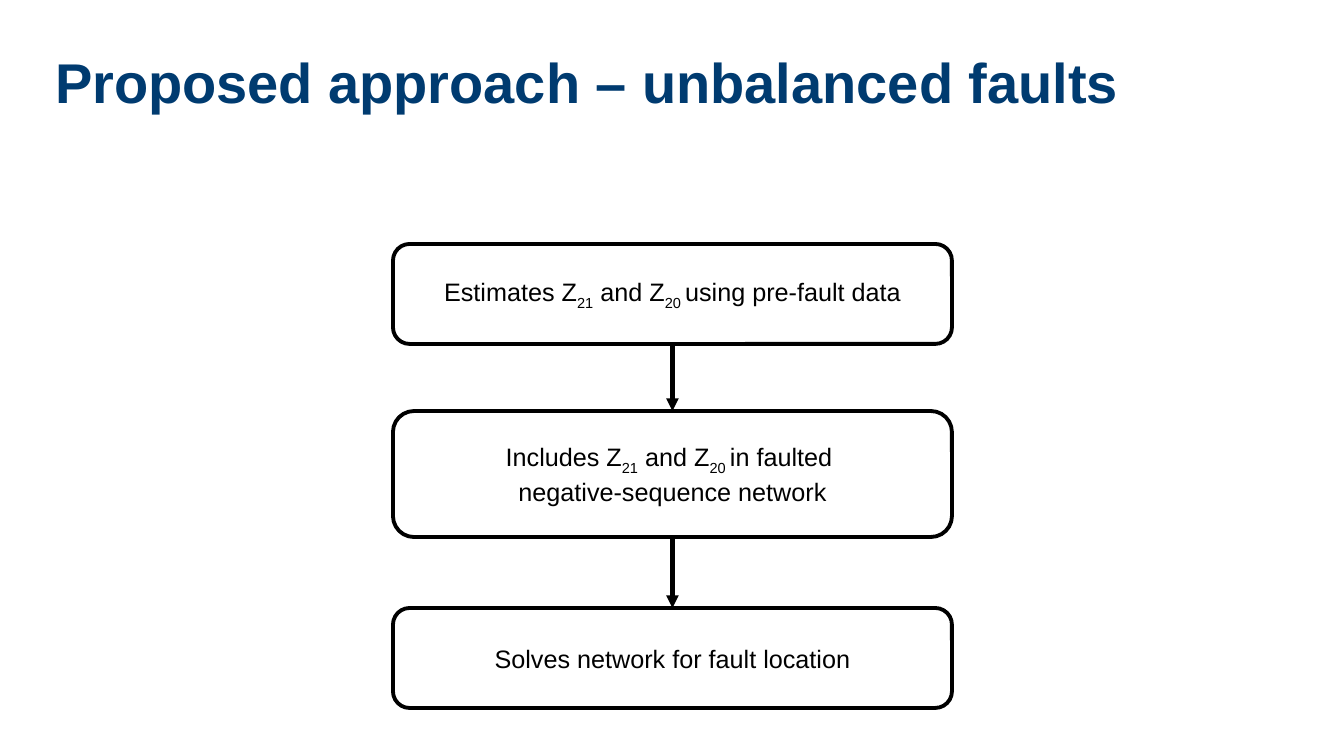
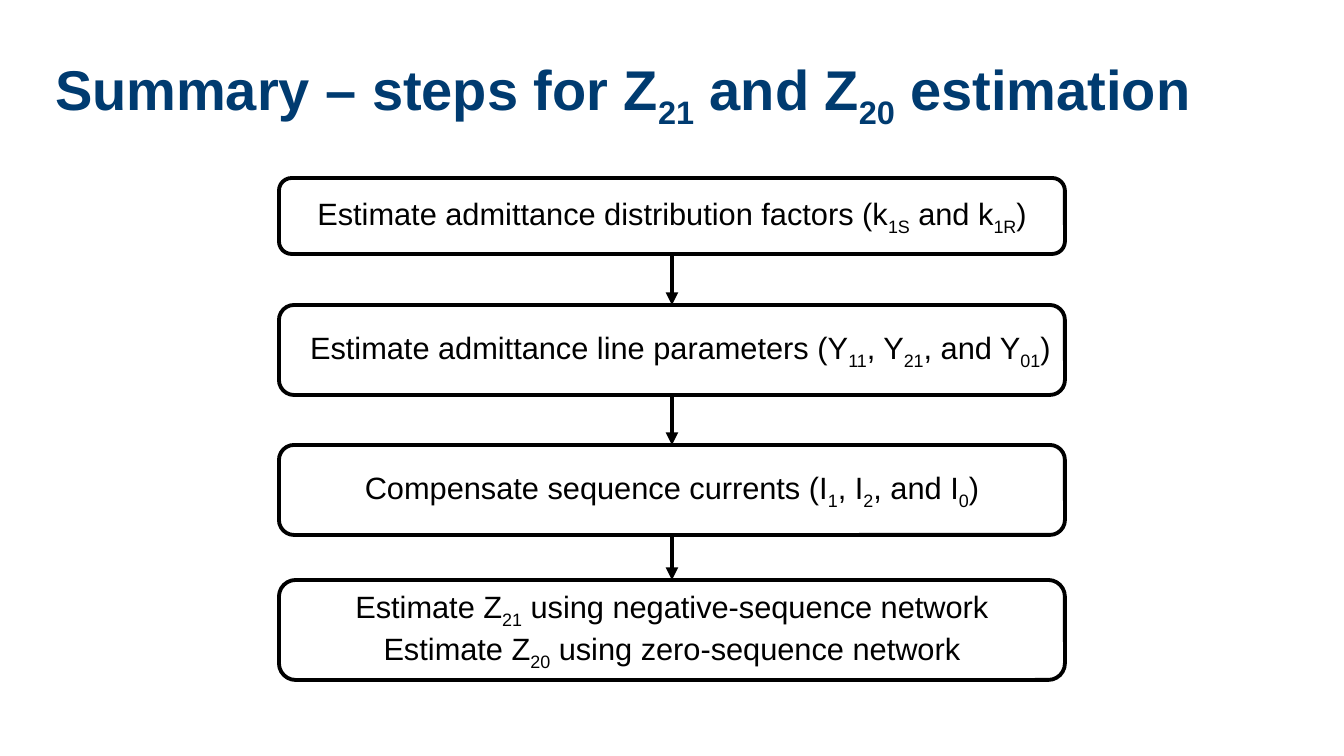
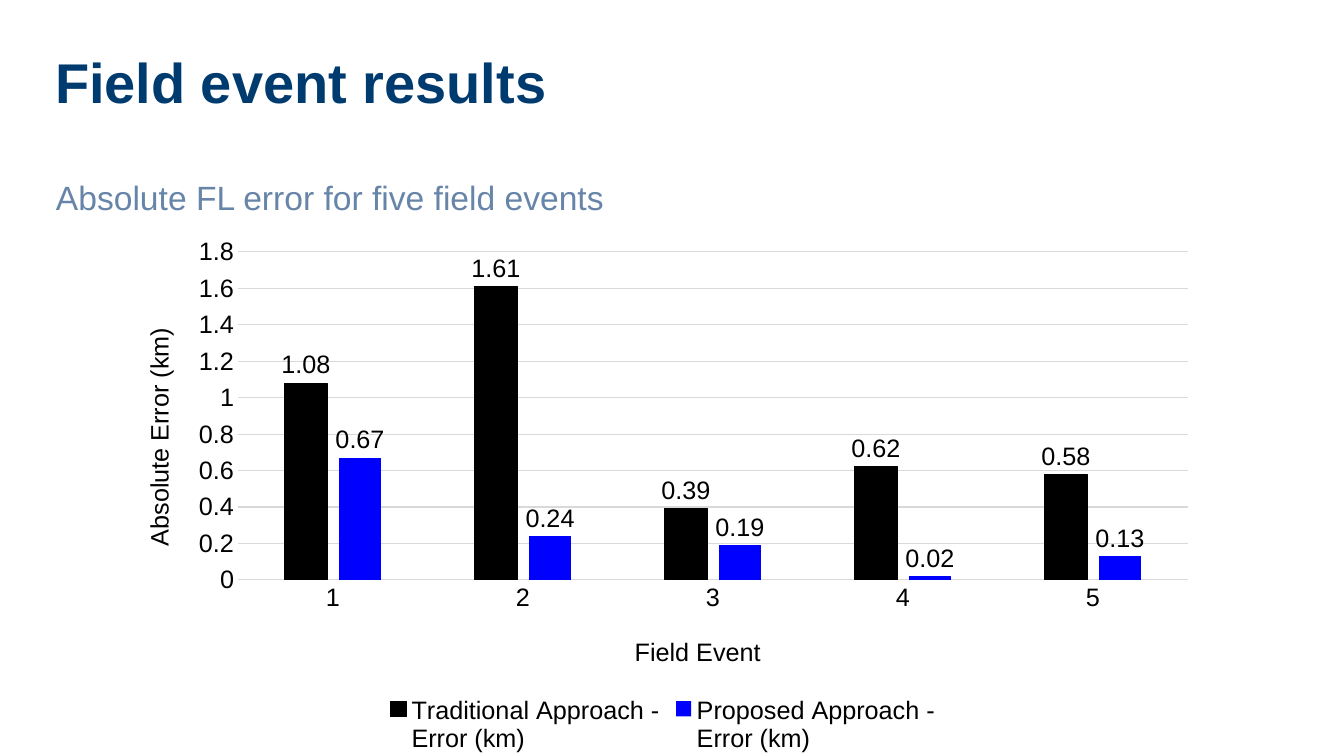
import dataclasses
import itertools

import pptx
import pptx.chart.data
import pptx.dml.color
import pptx.enum.chart
import pptx.enum.shapes
import pptx.enum.text
import pptx.oxml
import pptx.oxml.ns
import pptx.util
from lxml import etree

PX = 12192000 / 1344  # EMU in one px
WIDTH, HEIGHT = 1344, 756

ALIGN = pptx.enum.text.PP_ALIGN
ANCHOR = pptx.enum.text.MSO_ANCHOR
qn = pptx.oxml.ns.qn


@dataclasses.dataclass(frozen=True)
class Theme:
    font: str = "Arial"
    title: str = "003B70"
    subtitle: str = "6785A8"
    ink: str = "000000"
    paper: str = "FFFFFF"
    grid: str = "D9D9D9"
    accent: str = "0000FF"
    title_size: int = 40
    subtitle_size: int = 24
    step_size: int = 22
    body_size: int = 18
    outline: float = 2.75
    arrow: float = 3
    hairline: float = 0.75


def emu(*lengths):
    return [pptx.util.Emu(round(length * PX)) for length in lengths]


def rgb(value):
    return pptx.dml.color.RGBColor.from_string(value)


def write(frame, text, *, font, size, color, bold=False, align=ALIGN.LEFT,
          spacing=None, before=None, after=None):
    """Fill a text frame; parts between bars are subscripts, newlines are breaks."""
    para = frame.paragraphs[0]
    para.alignment = align
    if spacing is not None:
        para.line_spacing = spacing
    if before is not None:
        para.space_before = pptx.util.Pt(before)
    if after is not None:
        para.space_after = pptx.util.Pt(after)
    for index, part in enumerate(text.split("|")):
        for row, piece in enumerate(part.split("\n")):
            if row:
                para.add_line_break()
            if not piece:
                continue
            span = para.add_run()
            span.text = piece
            span.font.name = font
            span.font.size = pptx.util.Pt(size)
            span.font.bold = bold
            span.font.color.rgb = rgb(color)
            if index % 2:
                span._r.get_or_add_rPr().set("baseline", "-25000")


def set_layout(element, index, inner=False, **fractions):
    """Give a chart part a fixed place, as fractions of the chart."""
    for old in element.findall(qn("c:layout")):
        element.remove(old)
    layout = pptx.oxml.parse_xml(f"<c:layout {pptx.oxml.ns.nsdecls('c')}/>")
    manual = etree.SubElement(layout, qn("c:manualLayout"))
    settings = {"xMode": "edge", "yMode": "edge", **fractions}
    if inner:
        settings = {"layoutTarget": "inner", **settings}
    for name, value in settings.items():
        etree.SubElement(manual, qn(f"c:{name}")).set("val", str(value))
    element.insert(index, layout)


class Builder:
    def __init__(self, theme):
        self.theme = theme
        self.deck = pptx.Presentation()
        self.deck.slide_width, self.deck.slide_height = emu(WIDTH, HEIGHT)
        self.page = None

    def style_frame(self, frame, anchor, margin):
        frame.word_wrap = True
        frame.auto_size = pptx.enum.text.MSO_AUTO_SIZE.NONE
        frame.vertical_anchor = anchor
        frame.margin_left, frame.margin_right = emu(margin, margin)
        frame.margin_top, frame.margin_bottom = emu(5, 5)

    def add_page(self, title):
        self.page = self.deck.slides.add_slide(self.deck.slide_layouts[5])
        holder = self.page.shapes.title
        holder.left, holder.top, holder.width, holder.height = emu(50, 50, 1243, 126)
        self.style_frame(holder.text_frame, ANCHOR.TOP, 5)
        write(holder.text_frame, title, font=self.theme.font, bold=True,
              size=self.theme.title_size, color=self.theme.title, spacing=0.9)

    def add_subtitle(self, text, left, top, width, height):
        box = self.page.shapes.add_textbox(*emu(left, top, width, height))
        self.style_frame(box.text_frame, ANCHOR.TOP, 5)
        write(box.text_frame, text, font=self.theme.font, spacing=0.9, after=12,
              size=self.theme.subtitle_size, color=self.theme.subtitle)

    def add_step(self, text, left, top, width, height, **text_format):
        box = self.page.shapes.add_shape(
            pptx.enum.shapes.MSO_SHAPE.ROUNDED_RECTANGLE, *emu(left, top, width, height))
        box.shadow.inherit = False
        box.fill.solid()
        box.fill.fore_color.rgb = rgb(self.theme.paper)
        box.line.color.rgb = rgb(self.theme.ink)
        box.line.width = pptx.util.Pt(self.theme.outline)
        self.style_frame(box.text_frame, ANCHOR.MIDDLE, 10)
        write(box.text_frame, text, font=self.theme.font, color=self.theme.ink,
              **{"align": ALIGN.CENTER, **text_format})
        return box

    def add_arrow(self, upper, lower):
        arrow = self.page.shapes.add_connector(
            pptx.enum.shapes.MSO_CONNECTOR.STRAIGHT, 0, 0, 0, 0)
        arrow.begin_connect(upper, 2)
        arrow.end_connect(lower, 0)
        arrow.line.color.rgb = rgb(self.theme.ink)
        arrow.line.width = pptx.util.Pt(self.theme.arrow)
        etree.SubElement(arrow.line._get_or_add_ln(), qn("a:tailEnd")).set("type", "triangle")
        etree.SubElement(arrow._element.spPr, qn("a:effectLst"))

    def add_flow(self, left, width, size, steps):
        """Stack steps of (text, top, height, text format) and join them by arrows."""
        boxes = [self.add_step(text, left, top, width, height, size=size, **text_format)
                 for text, top, height, text_format in steps]
        for upper, lower in itertools.pairwise(boxes):
            self.add_arrow(upper, lower)

    def style_font(self, font):
        font.name = self.theme.font
        font.size = pptx.util.Pt(self.theme.body_size)
        font.bold = False
        font.color.rgb = rgb(self.theme.ink)

    def style_line(self, line, color):
        line.color.rgb = rgb(color)
        line.width = pptx.util.Pt(self.theme.hairline)

    def style_axis(self, axis, title, **place):
        marks = pptx.enum.chart.XL_TICK_MARK.NONE
        axis.major_tick_mark = axis.minor_tick_mark = marks
        self.style_font(axis.tick_labels.font)
        write(axis.axis_title.text_frame, title, font=self.theme.font,
              size=self.theme.body_size, color=self.theme.ink, align=ALIGN.CENTER)
        set_layout(axis.axis_title._element, 1, **place)

    def add_columns(self, left, top, width, height, categories, series):
        """Draw a clustered column chart from (name, values, colour) series."""
        data = pptx.chart.data.CategoryChartData()
        data.categories = categories
        for name, values, _ in series:
            data.add_series(name, values)
        chart = self.page.shapes.add_chart(
            pptx.enum.chart.XL_CHART_TYPE.COLUMN_CLUSTERED,
            *emu(left, top, width, height), data).chart
        chart.has_title = False
        self.style_font(chart.font)

        # Columns and their labels
        plot = chart.plots[0]
        plot.vary_by_categories = False
        plot.gap_width, plot.overlap = 219, -27
        for column, (_, _, color) in zip(plot.series, series):
            column.format.fill.solid()
            column.format.fill.fore_color.rgb = rgb(color)
            column.invert_if_negative = False
            labels = column.data_labels
            labels.show_value = True
            labels.position = pptx.enum.chart.XL_LABEL_POSITION.OUTSIDE_END
            self.style_font(labels.font)
        self.style_line(plot.series[0].format.line, self.theme.ink)

        # Axes
        self.style_axis(chart.category_axis, "Field Event", x=0.47, y=0.76)
        self.style_line(chart.category_axis.format.line, self.theme.grid)
        errors = chart.value_axis
        self.style_axis(errors, "Absolute Error (km)", x=0.02, y=0.18)
        body = errors.axis_title.text_frame._txBody.bodyPr
        body.set("rot", "-5400000")
        body.set("vert", "horz")
        errors.minimum_scale, errors.maximum_scale, errors.major_unit = 0, 1.8, 0.2
        errors.format.line.fill.background()
        self.style_line(errors.major_gridlines.format.line, self.theme.grid)

        # Legend and plot area
        chart.has_legend = True
        chart.legend.position = pptx.enum.chart.XL_LEGEND_POSITION.BOTTOM
        chart.legend.include_in_layout = False
        self.style_font(chart.legend.font)
        area = chart._chartSpace.chart.plotArea
        set_layout(area, 0, inner=True, x=round(122 / width, 4), y=round(24 / height, 4),
                   w=round(950 / width, 4), h=round(328 / height, 4))


def main():
    theme = Theme()
    builder = Builder(theme)

    # Approach
    builder.add_page("Proposed approach – unbalanced faults")
    builder.add_flow(393, 559, theme.body_size, [
        ("Estimates Z|21| and Z|20 |using pre-fault data", 244, 100, {}),
        ("Includes Z|21| and Z|20 |in faulted \nnegative-sequence network", 411, 126, {}),
        ("Solves network for fault location", 608, 100, {}),
    ])

    # Estimation steps
    builder.add_page("Summary – steps for Z|21| and Z|20| estimation")
    builder.add_flow(279, 786, theme.step_size, [
        ("Estimate admittance distribution factors (k|1S| and k|1R|)", 178, 76, {}),
        ("Estimate admittance line parameters (Y|11|, Y|21|, and Y|01|)", 305, 90,
         {"align": ALIGN.RIGHT, "before": 6}),
        ("Compensate sequence currents (I|1|, I|2|, and I|0|)", 445, 90, {}),
        ("Estimate Z|21| using negative-sequence network\n"
         "Estimate Z|20| using zero-sequence network", 580, 100, {}),
    ])

    # Results
    builder.add_page("Field event results")
    builder.add_subtitle("Absolute FL error for five field events", 51, 176, 1060, 73)
    builder.add_columns(116, 228, 1094, 530, ["1", "2", "3", "4", "5"], [
        ("Traditional Approach -\nError (km)", (1.08, 1.61, 0.39, 0.62, 0.58), theme.ink),
        ("Proposed Approach -\nError (km)", (0.67, 0.24, 0.19, 0.02, 0.13), theme.accent),
    ])

    builder.deck.save("out.pptx")


if __name__ == "__main__":
    main()
